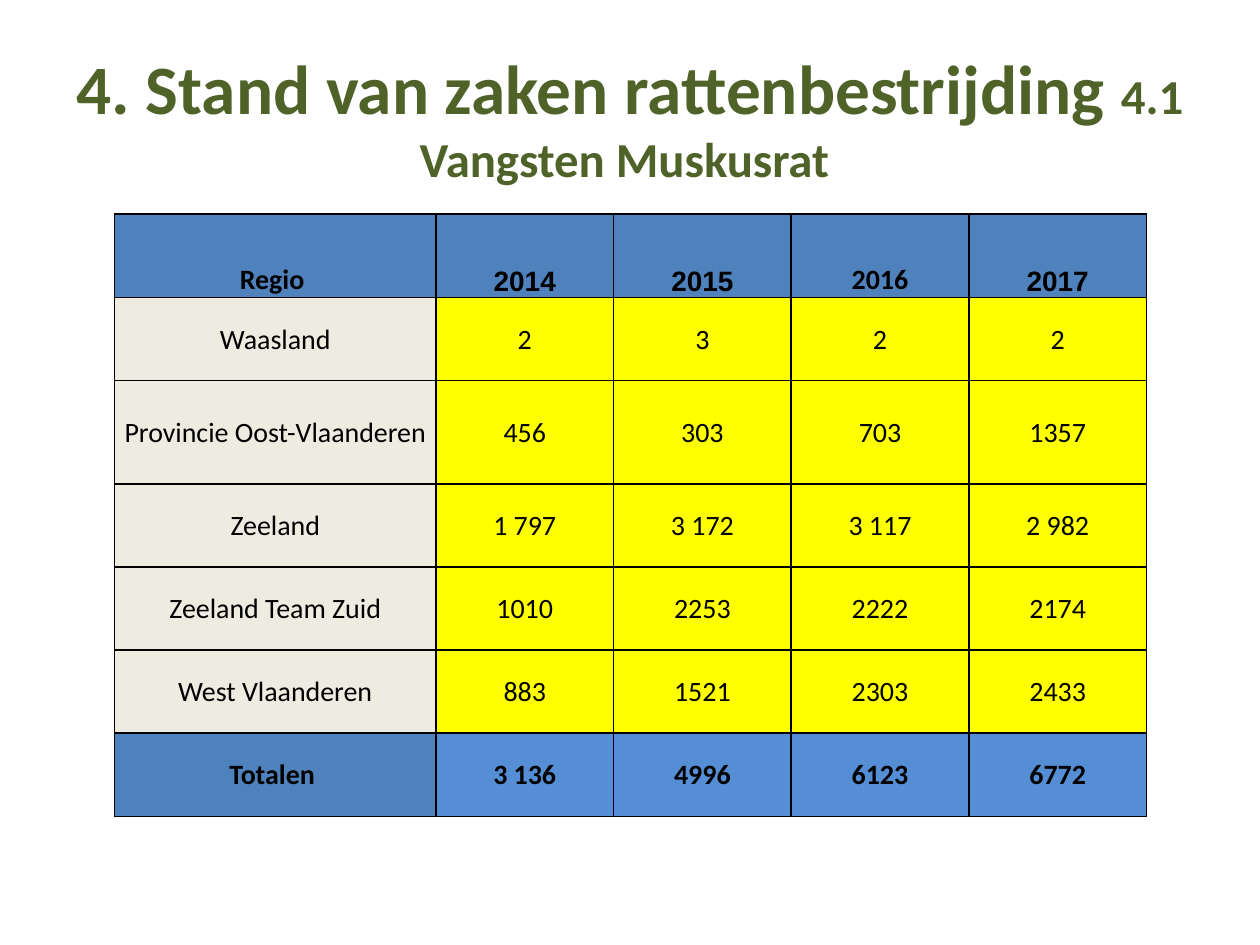
from lxml.etree import SubElement
from pptx import Presentation
from pptx.dml.color import RGBColor
from pptx.enum.text import MSO_ANCHOR as Anchor, MSO_AUTO_SIZE as Fit, PP_ALIGN as Align
from pptx.oxml.ns import qn
from pptx.util import Inches, Pt

BLACK, GREEN = "000000", "4F6228"
BLUE, SKY, CREAM, YELLOW = "4F81BD", "558ED5", "EEECE1", "FFFF00"
NAME_W, YEAR_W = 2.55, 1.41
ROW_H, TALL_H, TALL_ROW = 0.66, 0.82, 2
ROWS = [
    ["Regio ", "2014", "2015", "2016", "2017"],
    ["Waasland", "2", "3", "2", "2"],
    ["Provincie Oost-Vlaanderen", "456", "303", "703", "1357"],
    ["Zeeland", "1 797", "3 172", "3 117", "2 982"],
    ["Zeeland Team Zuid", "1010", "2253", "2222", "2174"],
    ["West Vlaanderen", "883", "1521", "2303", "2433"],
    ["Totalen ", "3 136", "4996", "6123", "6772"],
]
ARIAL_YEARS = {"2014", "2015", "2017"}


def rgb(code):
    return RGBColor.from_string(code)


def add_text(para, text, size=16, color=BLACK, bold=False, face="Calibri"):
    para.alignment = Align.CENTER
    run = para.add_run()
    run.text = text
    font = run.font
    font.name, font.size, font.bold = face, Pt(size), bold
    font.color.rgb = rgb(color)


def set_fill(cell, color):
    cell.fill.solid()
    cell.fill.fore_color.rgb = rgb(color)


def add_border(cell, color=BLACK, width=1):
    """Draw all four sides; call before the fill, which must follow the lines."""
    props = cell._tc.get_or_add_tcPr()
    for side in ("a:lnL", "a:lnR", "a:lnT", "a:lnB"):
        line = SubElement(props, qn(side), w=str(Pt(width)))
        SubElement(SubElement(line, qn("a:solidFill")), qn("a:srgbClr"), val=color)


def add_title(slide):
    title = slide.shapes.title
    title.left, title.top = Inches(0.5), Inches(0.3)
    title.width, title.height = Inches(9), Inches(1.25)
    frame = title.text_frame
    frame.word_wrap, frame.auto_size = True, Fit.NONE
    frame.vertical_anchor = Anchor.MIDDLE
    para = frame.paragraphs[0]
    add_text(para, "4. Stand van zaken rattenbestrijding ", size=39.6, color=GREEN, bold=True)
    add_text(para, "4.1 Vangsten Muskusrat ", size=27.9, color=GREEN, bold=True)


def cell_color(row, col):
    if row == 0:
        return BLUE
    if row == len(ROWS) - 1:
        return SKY if col else BLUE
    return YELLOW if col else CREAM


def format_cell(cell, text, row, col):
    cell.margin_left = cell.margin_right = cell.margin_top = Inches(0.01)
    cell.margin_bottom = 0
    cell.vertical_anchor = Anchor.MIDDLE if row else Anchor.BOTTOM
    add_border(cell)
    set_fill(cell, cell_color(row, col))
    face = "Arial" if row == 0 and text in ARIAL_YEARS else "Calibri"
    add_text(cell.text_frame.paragraphs[0], text, face=face,
             bold=row in (0, len(ROWS) - 1))


def add_catches(slide):
    widths = [NAME_W] + [YEAR_W] * (len(ROWS[0]) - 1)
    heights = [TALL_H if row == TALL_ROW else ROW_H for row in range(len(ROWS))]
    table = slide.shapes.add_table(
        len(ROWS), len(widths), Inches(0.91), Inches(1.7),
        Inches(sum(widths)), Inches(sum(heights))).table
    table.first_row = table.horz_banding = False
    for col, width in zip(table.columns, widths):
        col.width = Inches(width)
    for row, height in zip(table.rows, heights):
        row.height = Inches(height)
    for row, texts in enumerate(ROWS):
        for col, text in enumerate(texts):
            format_cell(table.cell(row, col), text, row, col)


def main():
    deck = Presentation()
    deck.slide_width, deck.slide_height = Inches(10), Inches(7.5)
    slide = deck.slides.add_slide(deck.slide_layouts[5])
    add_title(slide)
    add_catches(slide)
    deck.save("out.pptx")


if __name__ == "__main__":
    main()
